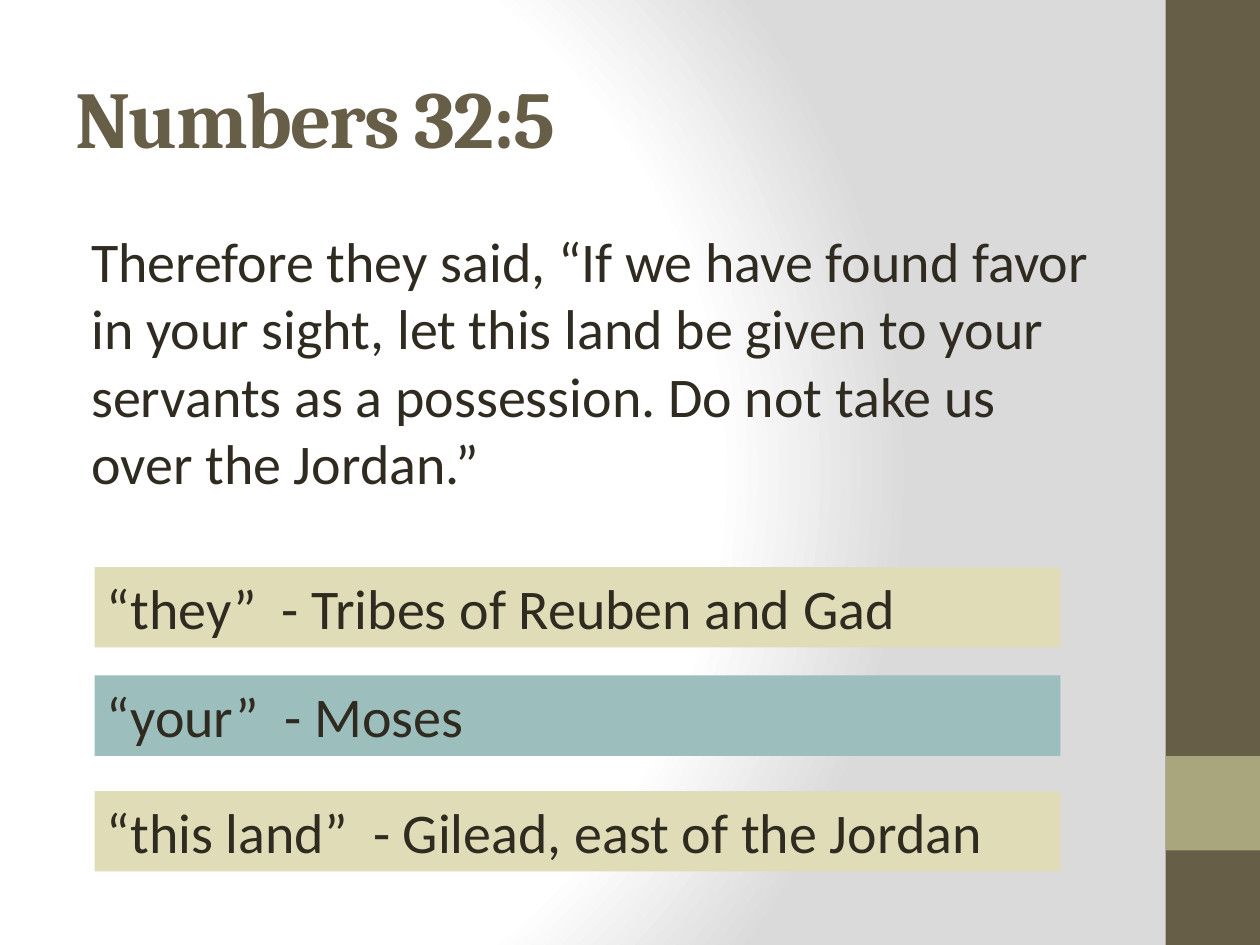
from lxml import etree
from pptx import Presentation
from pptx.dml.color import RGBColor as RGB
from pptx.enum.shapes import MSO_SHAPE as SHAPE
from pptx.enum.text import MSO_ANCHOR as ANCHOR, PP_ALIGN as ALIGN
from pptx.oxml import parse_xml
from pptx.oxml.ns import nsdecls, qn
from pptx.util import Pt

TITLE = "Numbers 32:5"
VERSE = ("Therefore they said, “If we have found favor in your sight, "
         "let this land be given to your servants as a possession. "
         "Do not take us over the Jordan.”")
NOTES = [  # text, fill, top
    ("“they”  - Tribes of Reuben and Gad", "sand", 324),
    ("“your”  - Moses", "teal", 386),
    ("“this land”  - Gilead, east of the Jordan", "sand", 452),
]
COLORS = {"brown": "675E47", "olive": "A9A57C", "ink": "2F2B20",
          "sand": "DFDCB7", "teal": "9CBEBD",
          "white": "FFFFFF", "gray": "DADADA"}
STOPS = [(0, "white"), (75, "white"), (100, "gray")]
WIDE, HIGH = 720, 540
BAR = 54
LEFT, SPAN = 36, 600


def paint_back(slide):
    """Fill the background with a radial gradient centred left of middle."""
    slide.background.fill.solid()
    prop = slide.background._cSld.find(".//" + qn("p:bgPr"))
    stops = "".join(
        f'<a:gs pos="{pos * 1000}"><a:srgbClr val="{COLORS[name]}"/></a:gs>'
        for pos, name in STOPS)
    grad = parse_xml(
        f'<a:gradFill {nsdecls("a")} rotWithShape="1"><a:gsLst>{stops}</a:gsLst>'
        '<a:path path="circle"><a:fillToRect l="20000" t="50000" '
        'r="100000" b="50000"/></a:path></a:gradFill>')
    prop.replace(prop.find(qn("a:solidFill")), grad)


def add_box(slide, x, y, w, h, fill):
    box = slide.shapes.add_shape(SHAPE.RECTANGLE, Pt(x), Pt(y), Pt(w), Pt(h))
    box.shadow.inherit = False
    box.fill.solid()
    box.fill.fore_color.rgb = RGB.from_string(COLORS[fill])
    box.line.fill.background()
    return box


def add_text(shape, text, size=32, font="Calibri", color="ink", bold=False,
             anchor=ANCHOR.TOP, indent=0, spacing=0):
    frame = shape.text_frame
    frame.word_wrap = True
    frame.vertical_anchor = anchor
    para = frame.paragraphs[0]
    para.alignment = ALIGN.LEFT
    if indent:
        props = para._p.get_or_add_pPr()
        props.set("marL", str(Pt(indent)))
        props.set("indent", "0")
    run = para.add_run()
    run.text = text
    run.font.size = Pt(size)
    run.font.name = font
    run.font.bold = bold
    run.font.color.rgb = RGB.from_string(COLORS[color])
    if spacing:
        run.font._element.set("spc", str(spacing * 100))


def main():
    deck = Presentation()
    deck.slide_width, deck.slide_height = Pt(WIDE), Pt(HIGH)
    slide = deck.slides.add_slide(deck.slide_layouts[6])
    paint_back(slide)

    edge = WIDE - BAR
    add_box(slide, edge, 0, BAR, HIGH, "brown")
    add_box(slide, edge, HIGH - 2 * BAR, BAR, BAR, "olive")

    title = slide.shapes.add_textbox(Pt(LEFT), Pt(21.6), Pt(SPAN), Pt(90))
    add_text(title, TITLE, size=46, font="Cambria", color="brown", bold=True,
             anchor=ANCHOR.MIDDLE, spacing=-1)
    verse = slide.shapes.add_textbox(Pt(LEFT), Pt(126), Pt(SPAN), Pt(180))
    add_text(verse, VERSE, indent=9)

    for text, fill, top in NOTES:
        add_text(add_box(slide, 54, top, 552, 46, fill), text)

    deck.save("out.pptx")


if __name__ == "__main__":
    main()
